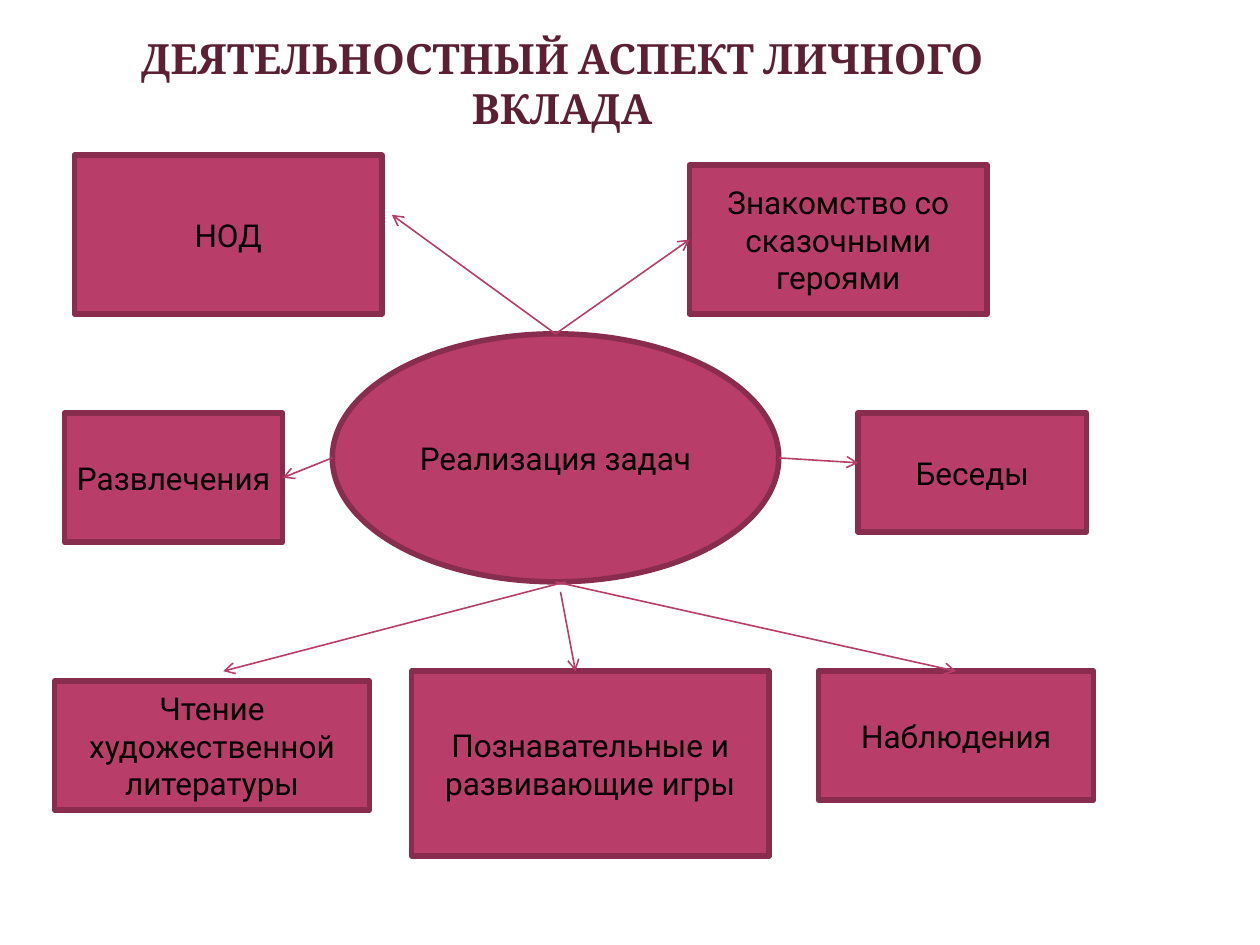
from lxml import etree
from pptx import Presentation
from pptx.dml.color import RGBColor
from pptx.enum.shapes import MSO_CONNECTOR, MSO_SHAPE
from pptx.enum.text import MSO_ANCHOR, MSO_AUTO_SIZE, PP_ALIGN
from pptx.oxml.ns import qn
from pptx.util import Cm, Pt

RECT, OVAL = MSO_SHAPE.RECTANGLE, MSO_SHAPE.OVAL
STRAIGHT = MSO_CONNECTOR.STRAIGHT
TOP, MIDDLE = MSO_ANCHOR.TOP, MSO_ANCHOR.MIDDLE
CENTER = PP_ALIGN.CENTER
NO_AUTOFIT = MSO_AUTO_SIZE.NONE
SIDE_TOP, SIDE_LEFT, SIDE_RIGHT = 0, 1, 3

FILL, BORDER = "B83D68", "882D4D"
TITLE_COLOR, TITLE_OUTLINE = "5C1F34", "5E1A50"

# Positions in cm, relative to the diagram's top left corner
HUB = ("Реализация задач", 5.6, 3.6, 9, 5)
BOXES = [
    ("НОД", 0.4, 0, 6.2, 3.2),
    ("Знакомство со сказочными героями", 12.8, 0.2, 6, 3),
    ("Развлечения", 0.2, 5.2, 4.4, 2.6),
    ("Беседы", 16.2, 5.2, 4.6, 2.4),
    ("Чтение художественной литературы", 0, 10.6, 6.35, 2.6),
    ("Познавательные и развивающие игры", 7.2, 10.4, 7.2, 3.73),
    ("Наблюдения", 15.4, 10.4, 5.55, 2.6),
]
# Start, then either an end point or a box and the side to join
ARROWS = [
    ((10.1, 3.6), ("Знакомство со сказочными героями", SIDE_LEFT)),
    ((10.1, 3.6), (6.8, 1.2)),
    ((14.6, 6.1), (16.2, 6.2)),
    ((5.6, 6.1), ("Развлечения", SIDE_RIGHT)),
    ((10.2, 8.8), (10.5, 10.4)),
    ((10.1, 8.6), ("Наблюдения", SIDE_TOP)),
    ((10.3, 8.6), (3.4, 10.4)),
]


def rgb(color):
    return RGBColor.from_string(color)


def write(sp, text, size=18, font="Roboto", color="000000", bold=False, anchor=MIDDLE):
    tf = sp.text_frame
    tf.word_wrap = True
    tf.auto_size = NO_AUTOFIT
    tf.vertical_anchor = anchor
    tf.margin_left = tf.margin_right = Cm(0.23)
    tf.margin_top = tf.margin_bottom = Cm(0.13)
    p = tf.paragraphs[0]
    p.alignment = CENTER
    r = p.add_run()
    r.text = text
    r.font.size = Pt(size)
    r.font.name = font
    r.font.bold = bold
    r.font.color.rgb = rgb(color)
    return r


def add_title(s, text, left, top, width, height):
    sp = s.shapes.title
    sp.left, sp.top, sp.width, sp.height = Cm(left), Cm(top), Cm(width), Cm(height)
    r = write(sp, text, size=23.8, font="Cambria", color=TITLE_COLOR, bold=True, anchor=TOP)
    # Thin outline of the letters
    ln = etree.Element(qn("a:ln"), w=str(Pt(0.04)))
    fill = etree.SubElement(ln, qn("a:solidFill"))
    etree.SubElement(fill, qn("a:srgbClr"), val=TITLE_OUTLINE)
    r.font._element.insert(0, ln)


def add_node(s, kind, text, left, top, width, height):
    sp = s.shapes.add_shape(kind, Cm(left), Cm(top), Cm(width), Cm(height))
    sp.shadow.inherit = False
    sp.fill.solid()
    sp.fill.fore_color.rgb = rgb(FILL)
    sp.line.color.rgb = rgb(BORDER)
    sp.line.width = Pt(3.15)
    write(sp, text)
    return sp


def add_arrow(s, x1, y1, x2, y2):
    line = s.shapes.add_connector(STRAIGHT, Cm(x1), Cm(y1), Cm(x2), Cm(y2))
    line.line.color.rgb = rgb(FILL)
    line.line.width = Pt(0.9)
    etree.SubElement(line.line._get_or_add_ln(), qn("a:tailEnd"), type="arrow")
    etree.SubElement(line._element.spPr, qn("a:effectLst"))
    return line


def add_diagram(s, left, top):
    # Central oval and the boxes around it
    text, x, y, w, h = HUB
    add_node(s, OVAL, text, left + x, top + y, w, h)
    nodes = {text: add_node(s, RECT, text, left + x, top + y, w, h)
             for text, x, y, w, h in BOXES}

    # Arrows from the oval
    for (x, y), (target, end) in ARROWS:
        start = (left + x, top + y)
        if target in nodes:
            add_arrow(s, *start, *start).end_connect(nodes[target], end)
        else:
            add_arrow(s, *start, left + target, top + end)


def main():
    prs = Presentation()
    prs.slide_width, prs.slide_height = Cm(25.4), Cm(19.05)
    s = prs.slides.add_slide(prs.slide_layouts[5])
    add_title(s, "ДЕЯТЕЛЬНОСТНЫЙ АСПЕКТ ЛИЧНОГО ВКЛАДА", 1.27, 0.53, 20.12, 2)
    add_diagram(s, 1.1, 3.13)
    prs.save("out.pptx")


if __name__ == "__main__":
    main()
